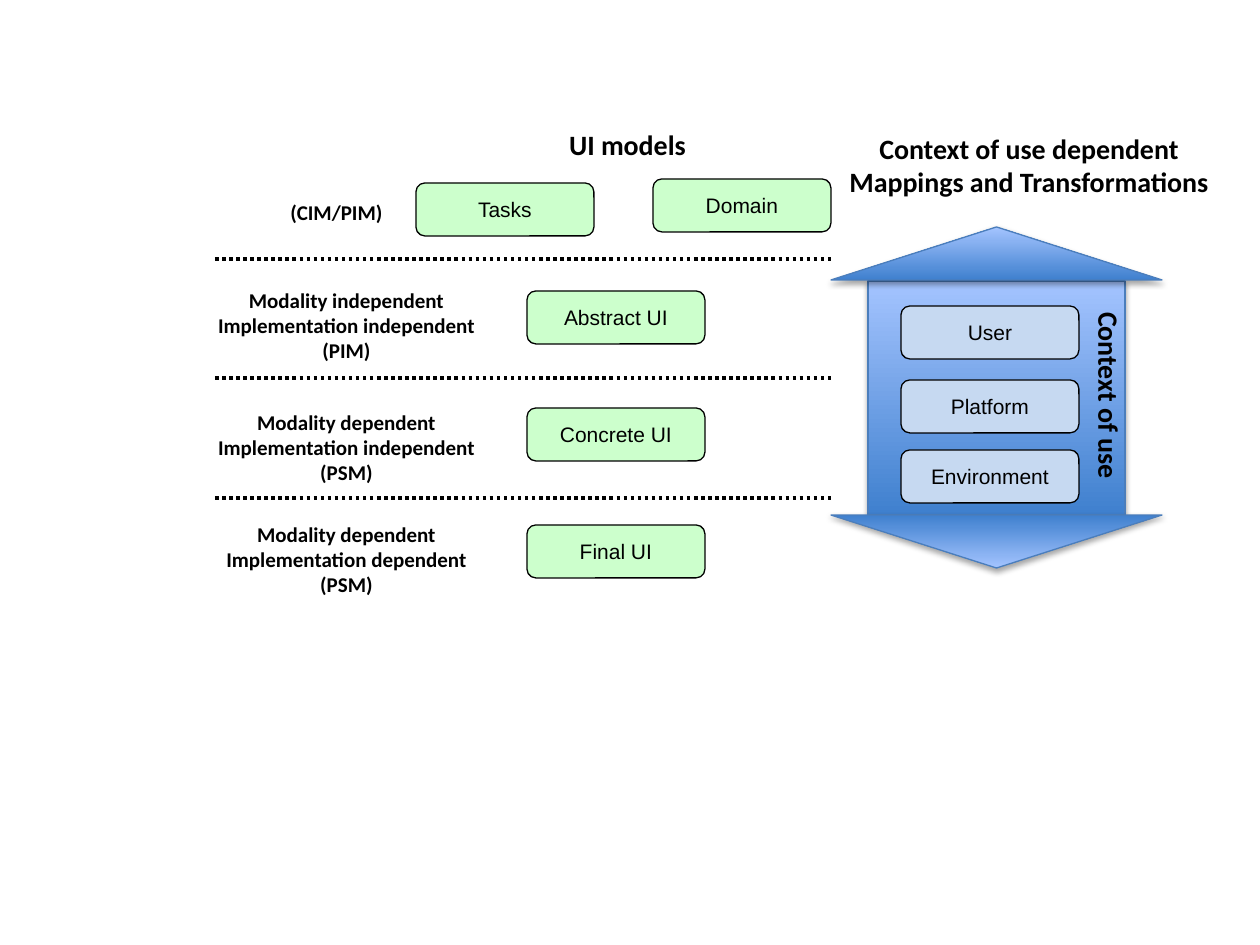
"""Build the slide on UI models and their context of use."""
from lxml import etree
from pptx import Presentation
from pptx import util as u
from pptx.dml.color import RGBColor
from pptx.enum import dml, shapes, text
from pptx.oxml.ns import qn

SCALE = 914400 / 126
BLACK = RGBColor(0x00, 0x00, 0x00)
GREEN = RGBColor(0xCC, 0xFF, 0xCC)
PALE_BLUE = RGBColor(0xC6, 0xD9, 0xF1)
DARK_BLUE = RGBColor(0x3F, 0x80, 0xCE)
LIGHT_BLUE = RGBColor(0xA4, 0xC4, 0xFF)
EDGE_BLUE = RGBColor(0x4B, 0x7E, 0xBC)

NODE_W, NODE_H = 178, 53
MODELS = [("Tasks", 416, 183), ("Domain", 653, 179)] + [
    (name, 527, 291 + 117 * i)
    for i, name in enumerate(["Abstract UI", "Concrete UI", "Final UI"])]
CONTEXTS = [("User", 901, 306), ("Platform", 901, 380), ("Environment", 901, 450)]
LEVELS = [
    (281, ["Modality independent", "Implementation independent", "(PIM)"]),
    (403, ["Modality dependent", "Implementation independent", "(PSM)"]),
    (515, ["Modality dependent", "Implementation dependent", "(PSM)"]),
]
HEADINGS = [
    ("UI models", (445, 121, 365, 47), 16, 0),
    ("Context of use dependent Mappings and Transformations", (831, 125, 396, 81), 16, 0),
    ("(CIM/PIM)", (154, 193, 365, 38), 12, 0),
    ("Context of use", (995, 372, 228, 47), 16, 90),
]
LINE_LEFT, LINE_RIGHT = 215, 831
LINE_YS = [259, 378, 498]
ARROW_BODY = (868, 281, 257, 234)
ARROW_HEADS = [((831, 227, 331, 53), 0), ((831, 515, 331, 53), 180)]


def px(*values):
    return [u.Emu(round(v * SCALE)) for v in values]


def write(sp, lines, font, size, bold=False):
    tf = sp.text_frame
    for i, line in enumerate(lines):
        p = tf.paragraphs[0] if i == 0 else tf.add_paragraph()
        p.text = line
        p.alignment = text.PP_ALIGN.CENTER
        p.font.name, p.font.size, p.font.bold = font, u.Pt(size), bold
        p.font.color.rgb = BLACK


def add_label(slide, lines, box, size, rotation=0):
    sp = slide.shapes.add_textbox(*px(*box))
    sp.rotation = rotation
    sp.text_frame.word_wrap = True
    write(sp, lines, "Calibri", size, True)


def add_outlined(slide, kind, box, edge):
    sp = slide.shapes.add_shape(kind, *px(*box))
    sp.line.color.rgb = edge
    sp.line.width = u.Pt(0.75)
    sp.shadow.inherit = False
    return sp


def add_node(slide, name, x, y, color):
    sp = add_outlined(slide, shapes.MSO_SHAPE.ROUNDED_RECTANGLE, (x, y, NODE_W, NODE_H), BLACK)
    sp.fill.solid()
    sp.fill.fore_color.rgb = color
    sp.text_frame.word_wrap = False
    sp.text_frame.vertical_anchor = text.MSO_ANCHOR.MIDDLE
    write(sp, [name], "Arial", 12)


def add_arrow_part(slide, kind, box, rotation=0):
    sp = add_outlined(slide, kind, box, EDGE_BLUE)
    sp.rotation = rotation
    sp.fill.gradient()
    sp.fill.gradient_angle = 90
    for stop, color in zip(sp.fill.gradient_stops, (DARK_BLUE, LIGHT_BLUE)):
        stop.color.rgb = color
    effects = sp._element.spPr.find(qn("a:effectLst"))
    shadow = etree.SubElement(effects, qn("a:outerShdw"), blurRad="40000", dist="23000",
                              dir="5400000", rotWithShape="0")
    color = etree.SubElement(shadow, qn("a:srgbClr"), val=str(BLACK))
    etree.SubElement(color, qn("a:alpha"), val="35000")


def add_divider(slide, y):
    line = slide.shapes.add_connector(shapes.MSO_CONNECTOR.STRAIGHT,
                                      *px(LINE_LEFT, y, LINE_RIGHT, y))
    line.line.color.rgb = BLACK
    line.line.width = u.Pt(2)
    line.line.dash_style = dml.MSO_LINE.ROUND_DOT
    etree.SubElement(line._element.spPr, qn("a:effectLst"))


def main():
    prs = Presentation()
    prs.slide_width, prs.slide_height = px(1260, 945)
    slide = prs.slides.add_slide(prs.slide_layouts[6])
    add_arrow_part(slide, shapes.MSO_SHAPE.RECTANGLE, ARROW_BODY)
    for box, rotation in ARROW_HEADS:
        add_arrow_part(slide, shapes.MSO_SHAPE.ISOSCELES_TRIANGLE, box, rotation)
    for nodes, color in ((CONTEXTS, PALE_BLUE), (MODELS, GREEN)):
        for name, x, y in nodes:
            add_node(slide, name, x, y, color)
    for y in LINE_YS:
        add_divider(slide, y)
    for y, lines in LEVELS:
        add_label(slide, lines, (164, y, 365, 89), 12)
    for heading, box, size, rotation in HEADINGS:
        add_label(slide, [heading], box, size, rotation)
    prs.save("out.pptx")


if __name__ == "__main__":
    main()
